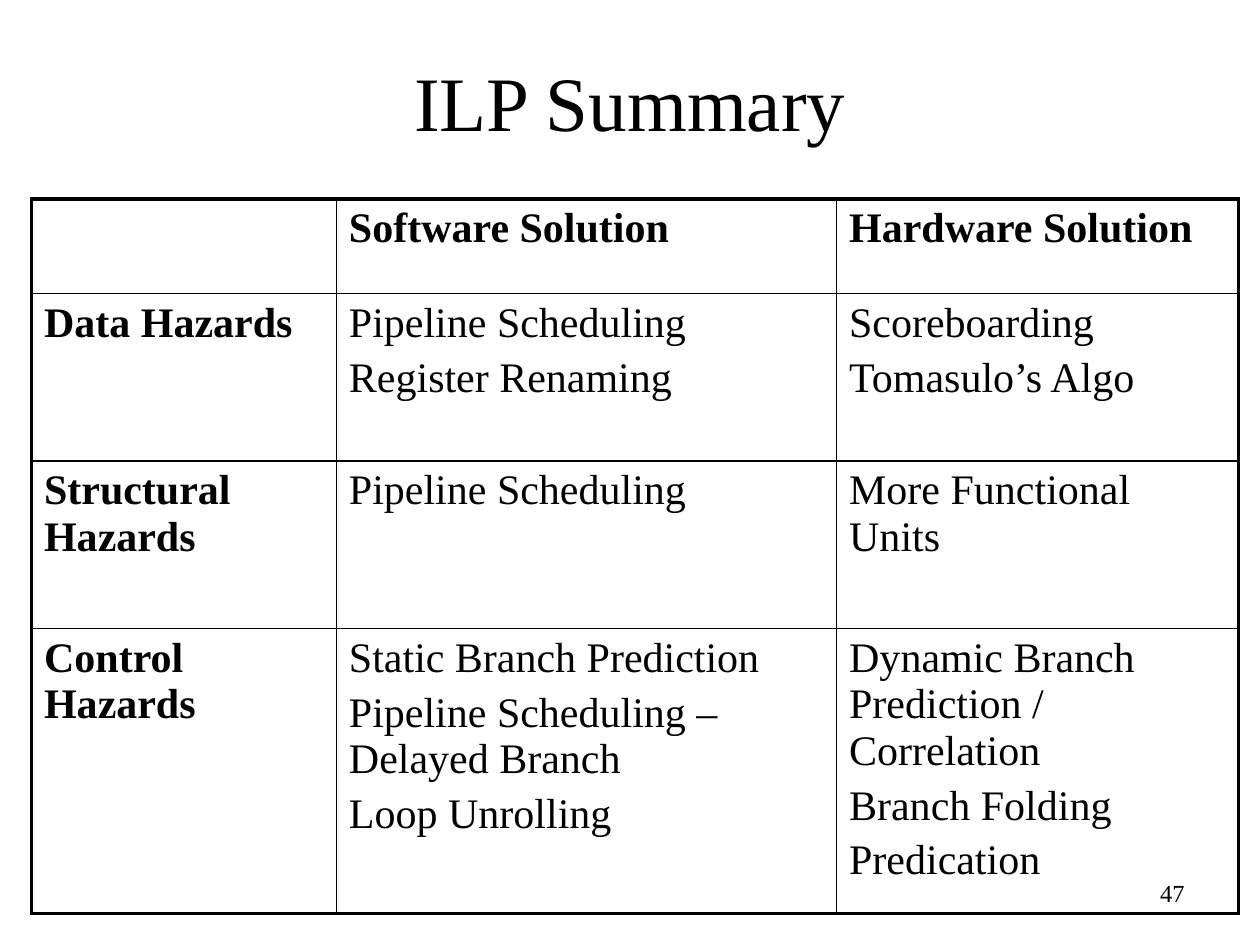
from lxml.etree import SubElement
from pptx import Presentation
from pptx.dml.color import RGBColor
from pptx.enum.text import MSO_ANCHOR, PP_ALIGN
from pptx.oxml import parse_xml
from pptx.oxml.ns import nsdecls, qn
from pptx.util import Inches, Pt

BLACK = RGBColor(0, 0, 0)
FONT = "Times New Roman"
THIN, THICK = Pt(1), Pt(2.25)

TITLE = "ILP Summary"
PAGE_NUMBER = "47"
HAZARDS = [
    [[], ["Software Solution"], ["Hardware Solution"]],
    [["Data Hazards"],
     ["Pipeline Scheduling", "Register Renaming"],
     ["Scoreboarding", "Tomasulo’s Algo"]],
    [["Structural Hazards"], ["Pipeline Scheduling"], ["More Functional Units"]],
    [["Control Hazards"],
     ["Static Branch Prediction", "Pipeline Scheduling – Delayed Branch", "Loop Unrolling"],
     ["Dynamic Branch Prediction / Correlation", "Branch Folding", "Predication"]],
]
COLUMN_WIDTHS = [2.42, 3.97, 3.19]
ROW_HEIGHTS = [0.75, 1.33, 1.33, 2.26]


def add_text(paragraph, text, size, bold=False):
    run = paragraph.add_run()
    run.text = text
    run.font.name = FONT
    run.font.size = Pt(size)
    run.font.bold = bold
    run.font.color.rgb = BLACK


def add_label(slide, text, size, box, align, anchor):
    frame = slide.shapes.add_textbox(*map(Inches, box)).text_frame
    frame.word_wrap = True
    frame.vertical_anchor = anchor
    frame.paragraphs[0].alignment = align
    add_text(frame.paragraphs[0], text, size)


def set_borders(cell, widths):
    properties = cell._tc.get_or_add_tcPr()
    for position, (side, width) in enumerate(widths.items()):
        line = parse_xml(f'<a:ln{side} {nsdecls("a")} w="{width}"/>')
        fill = SubElement(line, qn("a:solidFill"))
        SubElement(fill, qn("a:srgbClr"), val=str(BLACK))
        properties.insert(position, line)


def add_hazard_table(slide):
    row_count, column_count = len(ROW_HEIGHTS), len(COLUMN_WIDTHS)
    table = slide.shapes.add_table(
        row_count, column_count, Inches(0.25), Inches(1.58),
        Inches(sum(COLUMN_WIDTHS)), Inches(sum(ROW_HEIGHTS))).table
    table.first_row = table.horz_banding = False
    for column, width in zip(table.columns, COLUMN_WIDTHS):
        column.width = Inches(width)
    for row, height in zip(table.rows, ROW_HEIGHTS):
        row.height = Inches(height)

    for r, entries in enumerate(HAZARDS):
        for c, lines in enumerate(entries):
            cell = table.cell(r, c)
            cell.fill.background()
            set_borders(cell, {
                "L": THICK if c == 0 else THIN,
                "R": THICK if c == column_count - 1 else THIN,
                "T": THICK if r == 0 else THIN,
                "B": THICK if r == row_count - 1 else THIN,
            })
            frame = cell.text_frame
            for i, line in enumerate(lines):
                paragraph = frame.add_paragraph() if i else frame.paragraphs[0]
                paragraph.space_before = Pt(4.8)
                add_text(paragraph, line, 24, bold=r == 0 or c == 0)


def main():
    deck = Presentation()
    deck.slide_width, deck.slide_height = Inches(10), Inches(7.5)
    slide = deck.slides.add_slide(deck.slide_layouts[6])
    add_label(slide, PAGE_NUMBER, 14, (7.42, 6.92, 2.08, 0.5), PP_ALIGN.RIGHT, MSO_ANCHOR.TOP)
    add_label(slide, TITLE, 44, (0.75, 0.17, 8.5, 1.25), PP_ALIGN.CENTER, MSO_ANCHOR.MIDDLE)
    add_hazard_table(slide)
    deck.save("out.pptx")


if __name__ == "__main__":
    main()
